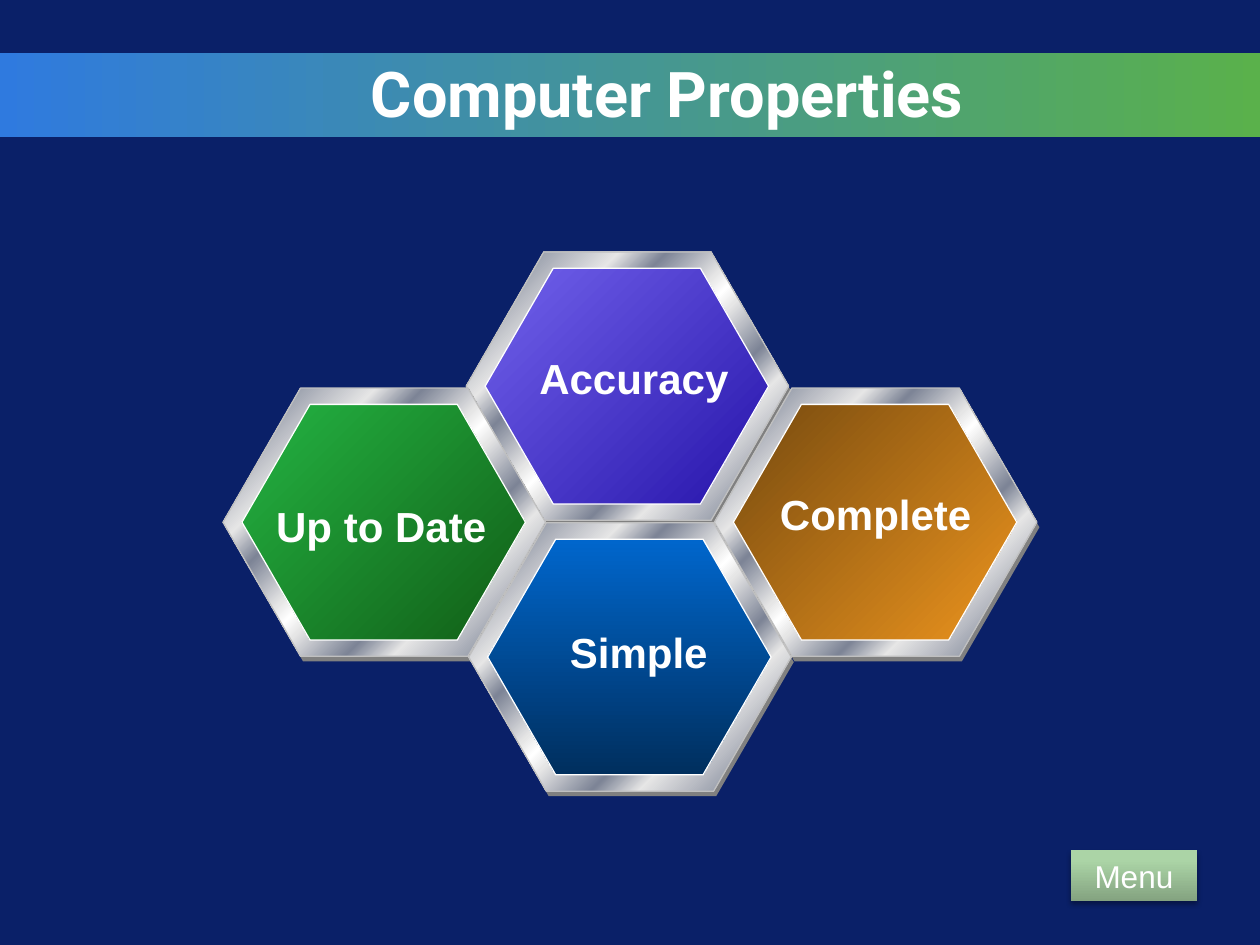
from dataclasses import dataclass

from lxml import etree
from pptx import Presentation
from pptx.dml.color import RGBColor
from pptx.enum.shapes import MSO_SHAPE
from pptx.enum.text import MSO_ANCHOR, MSO_AUTO_SIZE, PP_ALIGN
from pptx.oxml.ns import qn
from pptx.util import Inches, Pt

HEXAGON = MSO_SHAPE.HEXAGON
RECTANGLE = MSO_SHAPE.RECTANGLE
MIDDLE = MSO_ANCHOR.MIDDLE
FIT_SHAPE = MSO_AUTO_SIZE.SHAPE_TO_FIT_TEXT
NO_FIT = MSO_AUTO_SIZE.NONE
CENTER = PP_ALIGN.CENTER
RIGHT = PP_ALIGN.RIGHT


@dataclass(frozen=True)
class Theme:
    background: str = "0A2068"
    text: str = "FFFFFF"
    rim_line: str = "C0C0C0"
    hexagon_shadow: str = "808080"
    band: tuple = ((0, "2F7ADF"), (100, "5AB14B"))
    button: tuple = ((0, "84A380"), (80, "ABD4A6"), (100, "ABD5A6"))
    steel: tuple = (
        (0, "E6E6E6"), (7, "7D8496"), (26, "E6E6E6"), (34, "7D8496"),
        (46, "E6E6E6"), (50, "FFFFFF"), (54, "E6E6E6"), (66, "7D8496"),
        (74, "E6E6E6"), (93, "7D8496"), (100, "E6E6E6"),
    )
    purple: tuple = ((0, "7262EC"), (100, "2614AA"))
    green: tuple = ((0, "24B443"), (100, "115D16"))
    orange: tuple = ((0, "764A0F"), (100, "EC941E"))
    blue: tuple = ((0, "0066CC"), (100, "002F5E"))
    title_font: str = "Roboto"
    body_font: str = "Arial"
    title_size: int = 36
    label_size: int = 24
    button_size: int = 18


THEME = Theme()
RIM_SIZE = (2.56, 2.13)
FACE_SIZE = (2.25, 1.87)
LABEL_HEIGHT = 0.51

# label, rim corner, label corner, label width, face colours, gradient angle
PROPERTIES = (
    ("Accuracy", (3.7, 2.0), (4.17, 2.75), 1.72, THEME.purple, 45),
    ("Up to Date", (1.77, 3.08), (2.08, 3.92), 1.89, THEME.green, 45),
    ("Complete", (5.67, 3.08), (6.08, 3.83), 1.74, THEME.orange, 45),
    ("Simple", (3.72, 4.15), (4.42, 4.92), 1.3, THEME.blue, 90),
)


def color(value):
    return RGBColor.from_string(value)


def fill_gradient(shape, stops, angle):
    shape.fill.gradient()
    shape.fill.gradient_angle = -angle % 360
    stop_list = shape.element.spPr.find(qn("a:gradFill")).find(qn("a:gsLst"))
    for stop in list(stop_list):
        stop_list.remove(stop)
    for position, value in stops:
        stop = etree.SubElement(stop_list, qn("a:gs"), pos=str(position * 1000))
        etree.SubElement(stop, qn("a:srgbClr"), val=value)


def add_panel(shapes, kind, corner, size, fill, angle=0, line=None):
    shape = shapes.add_shape(kind, *map(Inches, corner + size))
    shape.shadow.inherit = False
    if isinstance(fill, str):
        shape.fill.solid()
        shape.fill.fore_color.rgb = color(fill)
    else:
        fill_gradient(shape, fill, angle)
    if line:
        shape.line.color.rgb = color(line)
        shape.line.width = Pt(0.75)
    else:
        shape.line.fill.background()
    return shape


def write_text(shape, text, font, size, bold=False, alignment=CENTER):
    paragraph = shape.text_frame.paragraphs[0]
    paragraph.alignment = alignment
    run = paragraph.add_run()
    run.text = text
    run.font.name = font
    run.font.size = Pt(size)
    run.font.bold = bold
    run.font.color.rgb = color(THEME.text)


def add_hexagon(shapes, corner, size, fill, angle=0, line=None):
    hexagon = add_panel(shapes, HEXAGON, corner, size, fill, angle, line)
    hexagon.adjustments[0] = 0.289


def add_property(slide, label, corner, label_corner, label_width, colors, angle):
    shapes = slide.shapes.add_group_shape().shapes
    left, top = corner
    add_hexagon(shapes, (left + 0.02, top + 0.04), RIM_SIZE, THEME.hexagon_shadow)
    add_hexagon(shapes, corner, RIM_SIZE, THEME.steel, 45, THEME.rim_line)
    add_hexagon(shapes, (left + 0.15, top + 0.13), FACE_SIZE, colors, angle, THEME.text)
    box = shapes.add_textbox(*map(Inches, label_corner + (label_width, LABEL_HEIGHT)))
    box.text_frame.word_wrap = False
    box.text_frame.auto_size = FIT_SHAPE
    write_text(box, label, THEME.body_font, THEME.label_size, bold=True)


def add_title(slide, text):
    title = slide.shapes.title
    title.left, title.top = Inches(0.5), Inches(0.42)
    title.width, title.height = Inches(7.25), Inches(0.62)
    title.text_frame.vertical_anchor = MIDDLE
    title.text_frame.auto_size = NO_FIT
    write_text(title, text, THEME.title_font, THEME.title_size, True, RIGHT)
    band = add_panel(slide.shapes, RECTANGLE, (0, 0.42), (10, 0.67), THEME.band)
    title.element.addprevious(band.element)


def add_button(slide, text):
    button = add_panel(slide.shapes, RECTANGLE, (8.5, 6.75), (1, 0.4), THEME.button, 270)
    button.text_frame.vertical_anchor = MIDDLE
    button.text_frame.auto_size = FIT_SHAPE
    write_text(button, text, THEME.body_font, THEME.button_size)
    effects = button.element.spPr.find(qn("a:effectLst"))
    shadow = etree.SubElement(
        effects, qn("a:outerShdw"), blurRad=str(Pt(3.1)), dist=str(Pt(1.8)),
        dir="5400000", rotWithShape="0",
    )
    shadow_color = etree.SubElement(shadow, qn("a:srgbClr"), val="000000")
    etree.SubElement(shadow_color, qn("a:alpha"), val="35000")


def main():
    presentation = Presentation()
    presentation.slide_width, presentation.slide_height = Inches(10), Inches(7.5)
    slide = presentation.slides.add_slide(presentation.slide_layouts[5])
    slide.background.fill.solid()
    slide.background.fill.fore_color.rgb = color(THEME.background)
    add_title(slide, "Computer Properties")
    for item in PROPERTIES:
        add_property(slide, *item)
    add_button(slide, "Menu")
    presentation.save("out.pptx")


if __name__ == "__main__":
    main()
